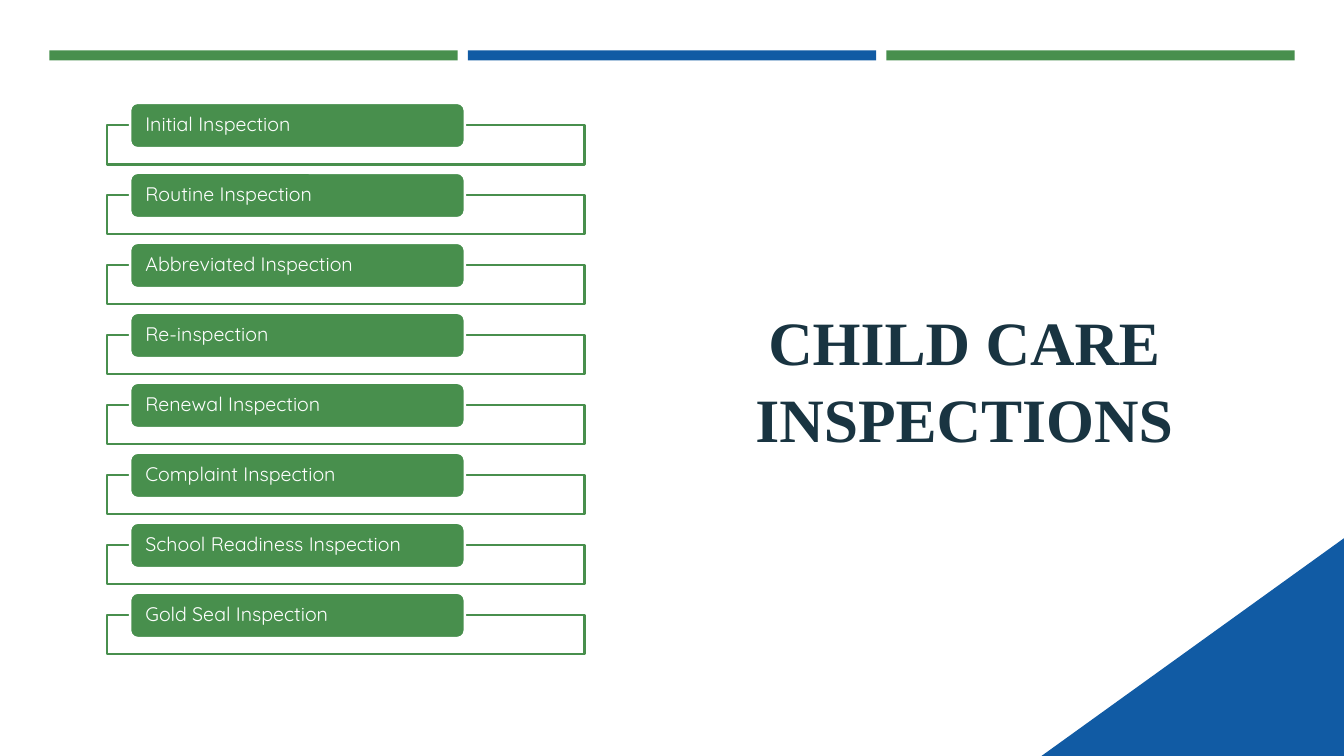
from lxml.etree import SubElement
from pptx import Presentation
from pptx.dml.color import RGBColor
from pptx.enum.shapes import MSO_SHAPE as Preset
from pptx.enum.text import MSO_ANCHOR as Anchor, PP_ALIGN as Align
from pptx.oxml.ns import qn
from pptx.util import Inches, Pt

COLORS = {"green": "488F4D", "blue": "115BA4", "navy": "193441", "white": "FFFFFF"}

INSPECTIONS = [
    "Initial Inspection",
    "Routine Inspection",
    "Abbreviated Inspection",
    "Re-inspection",
    "Renewal Inspection",
    "Complaint Inspection",
    "School Readiness Inspection",
    "Gold Seal Inspection",
]
FIRST_TOP = 1.02
LAST_TOP = 5.88
ROW_PITCH = (LAST_TOP - FIRST_TOP) / (len(INSPECTIONS) - 1)


def color(name):
    return RGBColor.from_string(COLORS[name])


def paint(shape, fill, line=None):
    shape.shadow.inherit = False
    shape.fill.solid()
    shape.fill.fore_color.rgb = color(fill)
    if line:
        shape.line.color.rgb = color(line)
        shape.line.width = Pt(1.75)
    else:
        shape.line.fill.background()


def add_block(slide, preset, box, fill, line=None):
    block = slide.shapes.add_shape(preset, *map(Inches, box))
    paint(block, fill, line)
    return block


def add_text(paragraph, text, font, size, tint, bold=False):
    run = paragraph.add_run()
    run.text = text
    run.font.name = font
    run.font.size = Pt(size)
    run.font.bold = bold
    run.font.color.rgb = color(tint)


def add_top_bars(slide):
    for index, fill in enumerate(("green", "blue", "green")):
        add_block(slide, Preset.RECTANGLE, (0.49 + index * 4.15, 0.5, 4.05, 0.1), fill)


def add_corner(slide):
    builder = slide.shapes.build_freeform(Inches(10.33), Inches(7.5))
    builder.add_line_segments(
        [(Inches(13.33), Inches(5.34)), (Inches(13.33), Inches(7.5))], close=True
    )
    paint(builder.convert_to_shape(), "blue")


def set_title(slide, text):
    title = slide.shapes.title
    title.left, title.top = Inches(6.67), Inches(2.92)
    title.width, title.height = Inches(5.79), Inches(1.65)
    frame = title.text_frame
    frame.word_wrap = True
    frame.vertical_anchor = Anchor.MIDDLE
    heading = frame.paragraphs[0]
    heading.alignment = Align.CENTER
    heading.line_spacing = 1.05
    add_text(heading, text, "Times New Roman", 44, "navy", bold=True)


def add_inspection(slide, text, top):
    tray = add_block(slide, Preset.RECTANGLE, (1.06, top + 0.22, 4.74, 0.39), "white", "green")
    tint = tray.fill._xPr.find(qn("a:solidFill"))[0]
    SubElement(tint, qn("a:alpha")).set("val", "90000")

    label = add_block(
        slide, Preset.ROUNDED_RECTANGLE, (1.29, top, 3.32, 0.45), "green", "white"
    )
    frame = label.text_frame
    frame.word_wrap = True
    frame.vertical_anchor = Anchor.MIDDLE
    frame.margin_left = frame.margin_right = Inches(0.13)
    frame.margin_top = frame.margin_bottom = 0
    caption = frame.paragraphs[0]
    caption.alignment = Align.LEFT
    caption.line_spacing = 0.9
    add_text(caption, text, "Quicksand", 14, "white")


def main():
    deck = Presentation()
    deck.slide_width, deck.slide_height = Inches(13.33), Inches(7.5)
    slide = deck.slides.add_slide(deck.slide_layouts[5])
    add_top_bars(slide)
    add_corner(slide)
    set_title(slide, "CHILD CARE INSPECTIONS")
    for row, inspection in enumerate(INSPECTIONS):
        add_inspection(slide, inspection, FIRST_TOP + row * ROW_PITCH)
    deck.save("out.pptx")


if __name__ == "__main__":
    main()
